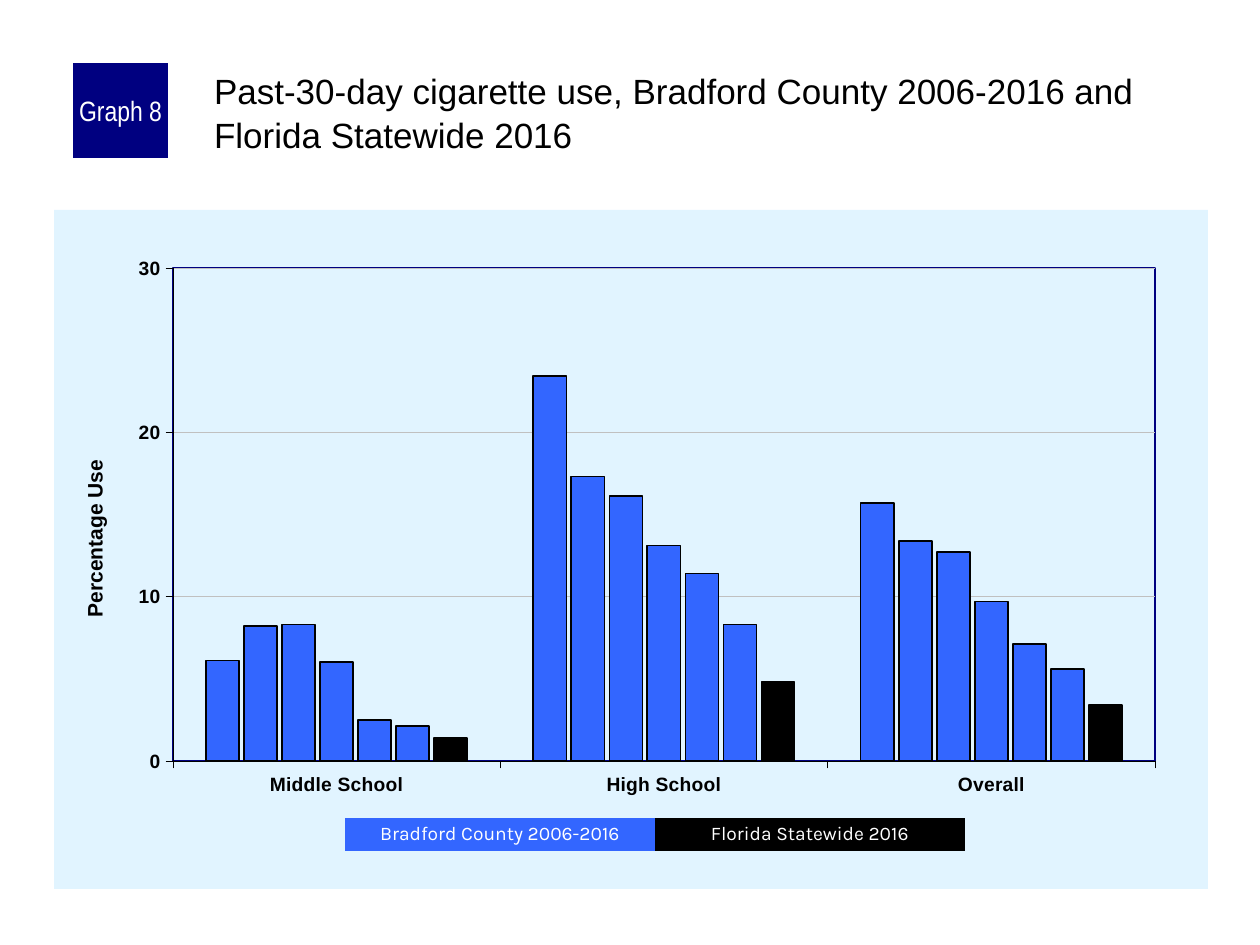
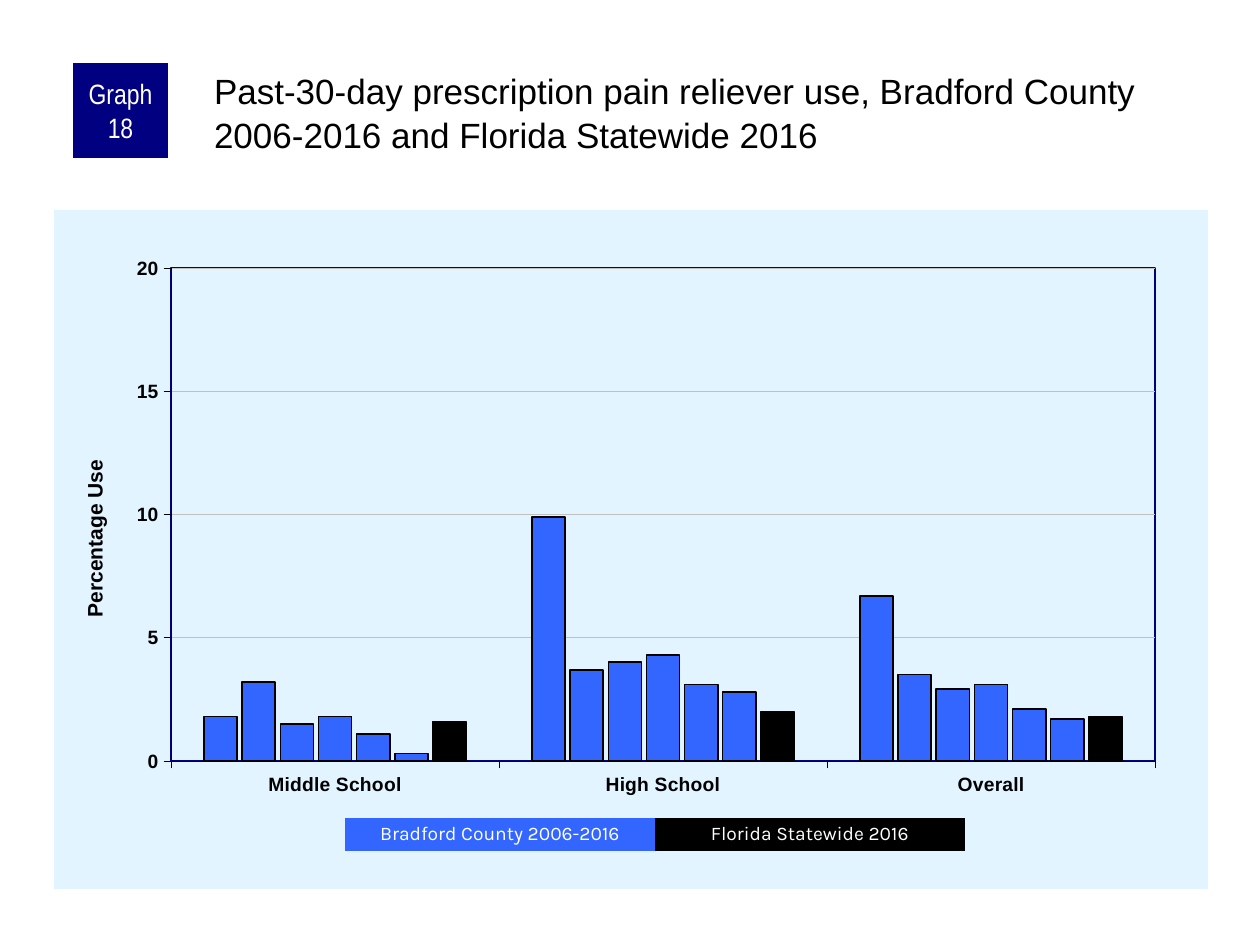
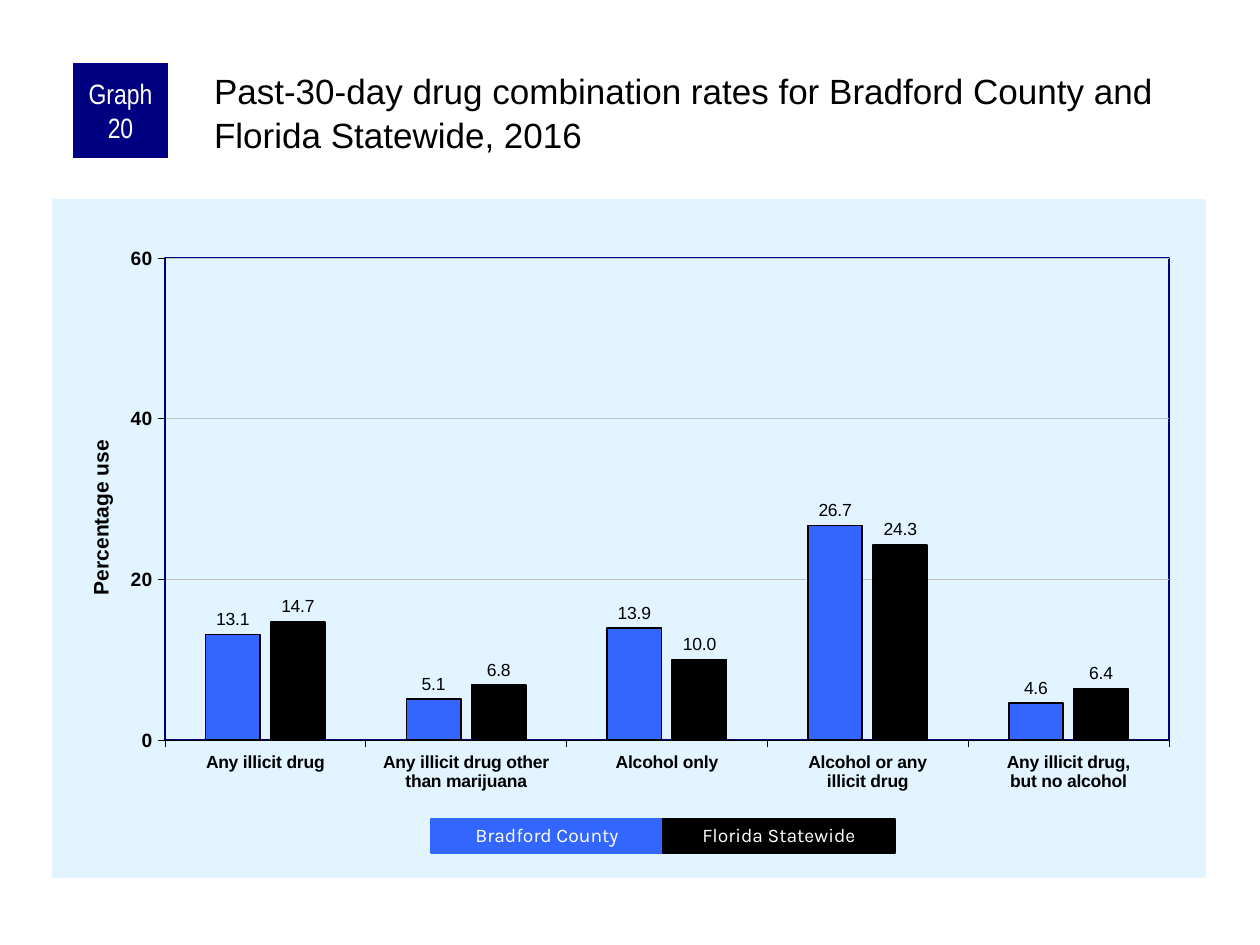
from pptx import Presentation
from pptx.chart.data import CategoryChartData
from pptx.dml.color import RGBColor
from pptx.enum.chart import XL_CHART_TYPE, XL_LABEL_POSITION, XL_TICK_MARK
from pptx.enum.shapes import MSO_SHAPE
from pptx.enum.text import MSO_ANCHOR, MSO_AUTO_SIZE, PP_ALIGN
from pptx.oxml import parse_xml
from pptx.oxml.ns import nsdecls, qn
from pptx.util import Inches, Pt

PIXELS_PER_INCH = 126
TITLE_ONLY_LAYOUT = 5

NAVY = RGBColor(0x00, 0x00, 0x80)
BLUE = RGBColor(0x33, 0x66, 0xFF)
BLACK = RGBColor(0x00, 0x00, 0x00)
WHITE = RGBColor(0xFF, 0xFF, 0xFF)
SILVER = RGBColor(0xC0, 0xC0, 0xC0)
PALE_BLUE = RGBColor(0xE1, 0xF4, 0xFF)

SCHOOLS = ["Middle School", "High School", "Overall"]
YEARLY_COLORS = [BLUE] * 6 + [BLACK]
YEARLY_STYLE = {
    "categories": SCHOOLS, "colors": YEARLY_COLORS, "box": (54, 210, 1154, 679),
    "axis_title": "Percentage Use", "axis_title_at": (24, 246),
    "gap_width": 200, "overlap": -15, "category_size": 11,
}
YEARLY_LEGEND = {
    "names": ["Bradford County 2006-2016", "Florida Statewide 2016"],
    "box": (345, 818, 310, 33),
}

GRAPHS = [
    {
        "number": 8,
        "title": "Past-30-day cigarette use, Bradford County 2006-2016 and Florida Statewide 2016",
        "chart": YEARLY_STYLE | {
            "plot_box": (119, 58, 982, 493), "maximum": 30, "major": 10,
            "rows": [(6.1, 23.4, 15.7), (8.2, 17.3, 13.4), (8.3, 16.1, 12.7), (6, 13.1, 9.7),
                     (2.5, 11.4, 7.1), (2.1, 8.3, 5.6), (1.4, 4.8, 3.4)],
        },
        "legend": YEARLY_LEGEND,
    },
    {
        "number": 18,
        "title": "Past-30-day prescription pain reliever use, Bradford County 2006-2016 "
                 "and Florida Statewide 2016",
        "chart": YEARLY_STYLE | {
            "plot_box": (117, 58, 984, 493), "maximum": 20, "major": 5,
            "rows": [(1.8, 9.9, 6.7), (3.2, 3.7, 3.5), (1.5, 4, 2.9), (1.8, 4.3, 3.1),
                     (1.1, 3.1, 2.1), (0.3, 2.8, 1.7), (1.6, 2, 1.8)],
        },
        "legend": YEARLY_LEGEND,
    },
    {
        "number": 20,
        "title": "Past-30-day drug combination rates for Bradford County and "
                 "Florida Statewide, 2016",
        "chart": {
            "categories": ["Any illicit drug", "Any illicit drug other than marijuana",
                           "Alcohol only", "Alcohol or any\nillicit drug",
                           "Any illicit drug,\nbut no alcohol"],
            "colors": [BLUE, BLACK], "box": (52, 199, 1154, 679),
            "axis_title": "Percentage use", "axis_title_at": (32, 237),
            "gap_width": 150, "overlap": -20, "category_size": 10,
            "plot_box": (113, 59, 1004, 482), "maximum": 60, "major": 20,
            "rows": [(13.1, 5.1, 13.9, 26.7, 4.6), (14.7, 6.8, 10, 24.3, 6.4)],
            "labeled": True,
        },
        "legend": {"names": ["Bradford County", "Florida Statewide"],
                   "box": (431, 819, 232, 34), "outlined": True},
    },
]


def px(*lengths):
    return [round(length * Inches(1) / PIXELS_PER_INCH) for length in lengths]


def set_values(target, values):
    for name, value in values.items():
        setattr(target, name, value)


def set_font(font, name, size, color, bold=False):
    set_values(font, {"name": name, "size": Pt(size), "bold": bold})
    font.color.rgb = color


def set_line(line, color, width):
    line.color.rgb = color
    line.width = Pt(width)


def set_layout(parent, index, chart_size, box, inner=False):
    """Place a chart part at a box given in px from the chart's corner."""
    for layout in parent.findall(qn("c:layout")):
        parent.remove(layout)
    target = '<c:layoutTarget val="inner"/>' if inner else ""
    names = ["x", "y", "w", "h"][:len(box)]
    modes = "".join(f'<c:{name}Mode val="edge"/>' for name in names[:2])
    sizes = "".join(f'<c:{name} val="{length / whole:.4f}"/>'
                    for name, length, whole in zip(names, box, chart_size * 2))
    parent.insert(index, parse_xml(
        f'<c:layout {nsdecls("c")}><c:manualLayout>{target}{modes}{sizes}'
        '</c:manualLayout></c:layout>'))


def area_format(fill, line):
    return parse_xml(f'<c:spPr {nsdecls("c", "a")}>{fill}<a:ln w="12700">{line}</a:ln></c:spPr>')


def solid(color):
    return f'<a:solidFill><a:srgbClr val="{color}"/></a:solidFill>'


class GraphDeck:
    def __init__(self):
        self.presentation = Presentation()
        width, height = px(1260, 945)
        set_values(self.presentation, {"slide_width": width, "slide_height": height})
        self.slide = None

    def add_slide(self, title):
        layout = self.presentation.slide_layouts[TITLE_ONLY_LAYOUT]
        self.slide = self.presentation.slides.add_slide(layout)
        shape = self.slide.shapes.title
        left, top, width, height = px(210, 63, 998, 105)
        set_values(shape, {"left": left, "top": top, "width": width, "height": height})
        inset, = px(4)
        set_values(shape.text_frame, {
            "text": title, "word_wrap": True, "auto_size": MSO_AUTO_SIZE.NONE,
            "vertical_anchor": MSO_ANCHOR.TOP, "margin_left": inset, "margin_top": inset,
            "margin_right": 0, "margin_bottom": 0})
        paragraph = shape.text_frame.paragraphs[0]
        set_values(paragraph, {"alignment": PP_ALIGN.LEFT, "line_spacing": 1.05})
        set_font(paragraph.runs[0].font, "Arial", 20, BLACK)

    def add_box(self, text, box, color, font_name, size, spacing=1.0, outlined=False):
        shape = self.slide.shapes.add_shape(MSO_SHAPE.RECTANGLE, *px(*box))
        shape.shadow.inherit = False
        shape.fill.solid()
        shape.fill.fore_color.rgb = color
        if outlined:
            set_line(shape.line, color, 0.75)
        else:
            shape.line.fill.background()
        inset, = px(6)
        set_values(shape.text_frame, {
            "text": text, "word_wrap": True, "vertical_anchor": MSO_ANCHOR.MIDDLE,
            "margin_left": inset, "margin_right": inset, "margin_top": 0, "margin_bottom": 0})
        paragraph = shape.text_frame.paragraphs[0]
        set_values(paragraph, {"alignment": PP_ALIGN.CENTER, "line_spacing": spacing})
        set_font(paragraph.runs[0].font, font_name, size, WHITE)

    def add_badge(self, number):
        self.add_box(f"Graph {number}", (73, 63, 95, 95), NAVY, "Arial Narrow", 16)

    def add_legend(self, names, box, outlined=False):
        left, top, width, height = box
        for index, (name, color) in enumerate(zip(names, (BLUE, BLACK))):
            self.add_box(name, (left + index * width, top, width, height), color,
                         "Karla", 11, 0.9, outlined)

    def add_column_chart(self, categories, rows, colors, box, plot_box, axis_title,
                         axis_title_at, maximum, major, gap_width, overlap, category_size,
                         labeled=False):
        data = CategoryChartData()
        data.categories = categories
        for number, row in enumerate(rows, 1):
            data.add_series(f"Series {number}", row)
        chart = self.slide.shapes.add_chart(
            XL_CHART_TYPE.COLUMN_CLUSTERED, *px(*box), data).chart
        set_values(chart, {"has_legend": False, "has_title": False})
        set_font(chart.font, "Arial", 8, BLACK)

        plot = chart.plots[0]
        set_values(plot, {"gap_width": gap_width, "overlap": overlap,
                          "vary_by_categories": False, "has_data_labels": labeled})
        if labeled:
            set_values(plot.data_labels, {
                "show_value": True, "number_format": "0.0", "number_format_is_linked": False,
                "position": XL_LABEL_POSITION.OUTSIDE_END})
            set_font(plot.data_labels.font, "Arial", 10, BLACK)
        for series, color in zip(plot.series, colors):
            series.format.fill.solid()
            series.format.fill.fore_color.rgb = color
            set_line(series.format.line, BLACK, 1)

        value_axis = chart.value_axis
        for axis, size in ((chart.category_axis, category_size), (value_axis, 11)):
            axis.major_tick_mark = XL_TICK_MARK.OUTSIDE
            set_font(axis.tick_labels.font, "Arial", size, BLACK, bold=True)
            set_line(axis.format.line, BLACK, 0.25)
        set_values(value_axis, {"minimum_scale": 0, "maximum_scale": maximum,
                                "major_unit": major, "has_major_gridlines": True})
        set_line(value_axis.major_gridlines.format.line, SILVER, 0.25)
        title_frame = value_axis.axis_title.text_frame
        title_frame.text = axis_title
        set_font(title_frame.paragraphs[0].runs[0].font, "Arial", 12, BLACK, bold=True)

        chart_space = chart.element if hasattr(chart, "element") else chart._chartSpace
        title = chart_space.find(".//" + qn("c:valAx") + "/" + qn("c:title"))
        title.find(".//" + qn("a:bodyPr")).set("rot", "-5400000")
        plot_area = chart_space.find(".//" + qn("c:plotArea"))
        set_layout(title, 1, box[2:], axis_title_at)
        set_layout(plot_area, 0, box[2:], plot_box, inner=True)
        plot_area.append(area_format("<a:noFill/>", solid(NAVY)))
        chart_space.find(qn("c:chart")).addnext(area_format(solid(PALE_BLUE), "<a:noFill/>"))


def main():
    deck = GraphDeck()
    for graph in GRAPHS:
        deck.add_slide(graph["title"])
        deck.add_column_chart(**graph["chart"])
        deck.add_badge(graph["number"])
        deck.add_legend(**graph["legend"])
    deck.presentation.save("out.pptx")


if __name__ == "__main__":
    main()
